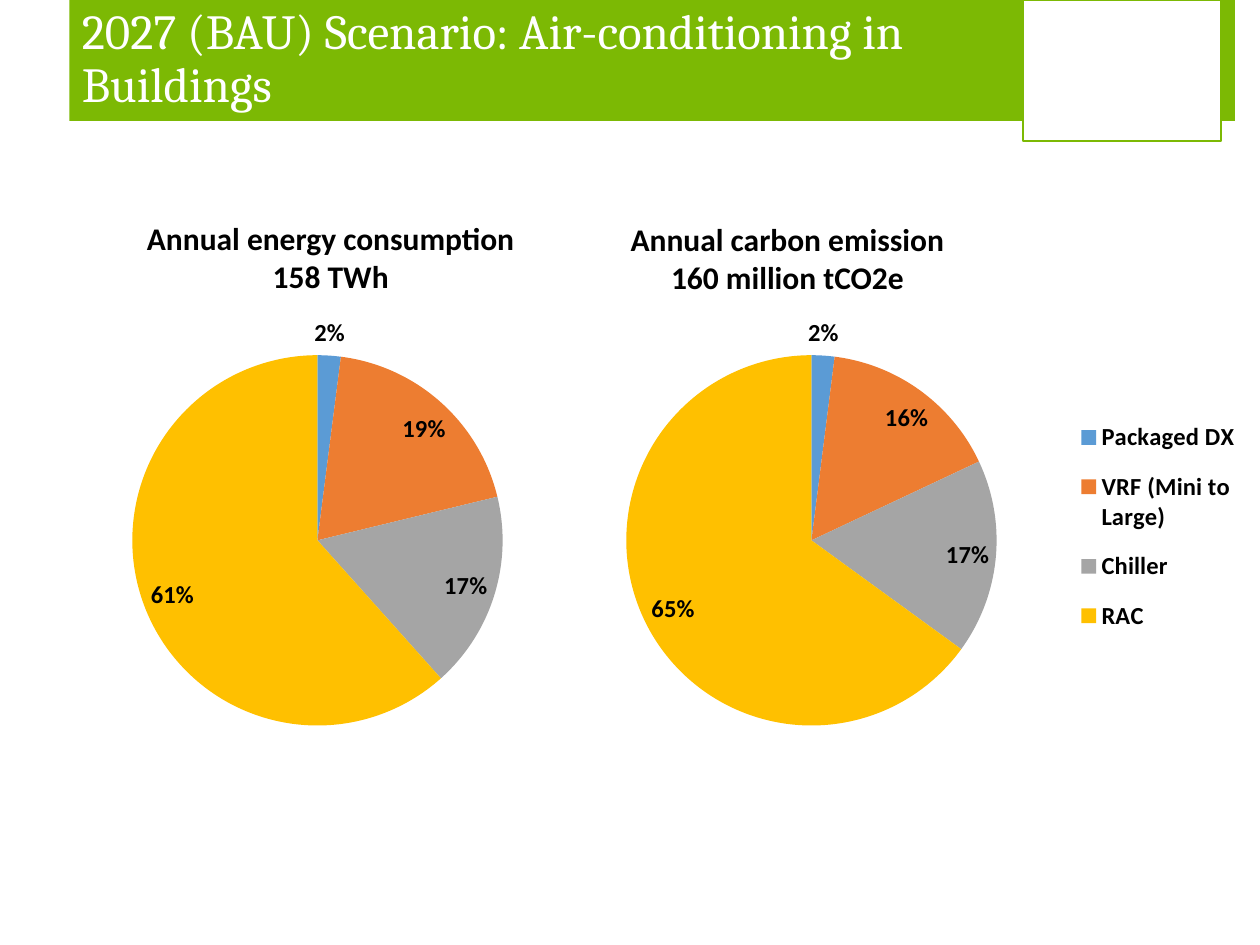
from dataclasses import dataclass
from typing import Optional

from lxml.etree import SubElement
from pptx import Presentation
from pptx.chart.data import CategoryChartData
from pptx.dml.color import RGBColor
from pptx.enum.chart import XL_CHART_TYPE, XL_LABEL_POSITION, XL_LEGEND_POSITION
from pptx.enum.shapes import MSO_SHAPE
from pptx.enum.text import MSO_ANCHOR, MSO_AUTO_SIZE, PP_ALIGN
from pptx.oxml.ns import qn
from pptx.util import Inches, Pt

GREEN = "7CB904"
WHITE = "FFFFFF"
BLACK = "000000"
SLICE_COLOURS = ["5B9BD5", "ED7D31", "A5A5A5", "FFC000"]
SYSTEMS = ["Packaged DX", "VRF (Mini to Large)", "Chiller", "RAC"]
PIE_TOP, PIE_HEIGHT = 2.39, 3.52
PIE_DIAMETER = 2.94
PIE_CENTRE_Y = 4.29


@dataclass
class Box:
    left: float
    top: float
    width: float
    height: float

    def lengths(self) -> list:
        return [Inches(v) for v in (self.left, self.top, self.width, self.height)]

    def share(self, part: "Box") -> dict:
        return {
            "x": (part.left - self.left) / self.width,
            "y": (part.top - self.top) / self.height,
            "w": part.width / self.width,
            "h": part.height / self.height,
        }


@dataclass
class Panel:
    heading: list
    heading_box: Box
    chart_box: Box
    pie_centre_x: float
    shares: list
    legend_box: Optional[Box] = None


PANELS = [
    Panel(["Annual energy consumption", "158 TWh"], Box(1.05, 1.69, 3.15, 0.71),
          Box(-0.15, PIE_TOP, 5.33, PIE_HEIGHT), 2.52, [2, 19, 17, 61]),
    Panel(["Annual carbon emission", "160 million tCO2e"], Box(4.89, 1.7, 2.72, 0.71),
          Box(4.31, PIE_TOP, 5.69, PIE_HEIGHT), 6.44, [2, 16, 17, 65],
          Box(8.49, 3.2, 1.4, 1.96)),
]


def colour(code: str) -> RGBColor:
    return RGBColor.from_string(code)


def set_font(font, code: str, **formats) -> None:
    for attribute, value in formats.items():
        setattr(font, attribute, value)
    font.color.rgb = colour(code)


def draw_rectangle(slide, box: Box, fill: str, outline: Optional[str] = None) -> None:
    rectangle = slide.shapes.add_shape(MSO_SHAPE.RECTANGLE, *box.lengths())
    rectangle.shadow.inherit = False
    rectangle.fill.solid()
    rectangle.fill.fore_color.rgb = colour(fill)
    if outline:
        rectangle.line.color.rgb = colour(outline)
        rectangle.line.width = Pt(1.5)
    else:
        rectangle.line.fill.background()


def place_title(slide, wording: str, box: Box) -> None:
    title = slide.shapes.title
    slide.shapes._spTree.append(title._element)
    title.left, title.top, title.width, title.height = box.lengths()
    frame = title.text_frame
    frame.text = wording
    frame_formats = {
        "word_wrap": True,
        "auto_size": MSO_AUTO_SIZE.NONE,
        "vertical_anchor": MSO_ANCHOR.MIDDLE,
    }
    for attribute, value in frame_formats.items():
        setattr(frame, attribute, value)
    paragraph = frame.paragraphs[0]
    paragraph.alignment = PP_ALIGN.LEFT
    paragraph.line_spacing = 0.9
    set_font(paragraph.runs[0].font, WHITE, name="Cambria", size=Pt(28))


def draw_heading(slide, panel: Panel) -> None:
    frame = slide.shapes.add_textbox(*panel.heading_box.lengths()).text_frame
    frame.word_wrap = False
    frame.text = "\n".join(panel.heading)
    for paragraph in frame.paragraphs:
        paragraph.alignment = PP_ALIGN.CENTER
        set_font(paragraph.runs[0].font, BLACK, name="Calibri", size=Pt(18), bold=True)


def set_layout(element, shares: dict, inner: bool = False) -> None:
    layout = element.find(qn("c:layout"))
    if layout is None:
        layout = SubElement(element, qn("c:layout"))
        before = element.find(qn("c:legendPos"))
        if before is not None:
            before.addnext(layout)
        else:
            element.insert(0, layout)
    manual = SubElement(layout, qn("c:manualLayout"))
    settings = {"layoutTarget": "inner"} if inner else {}
    settings.update({"xMode": "edge", "yMode": "edge"})
    settings.update({key: f"{value:.3f}" for key, value in shares.items()})
    for name, value in settings.items():
        SubElement(manual, qn(f"c:{name}")).set("val", value)


def draw_pie(slide, panel: Panel) -> None:
    shares = CategoryChartData()
    shares.categories = SYSTEMS
    shares.add_series("Series 1", panel.shares)
    chart = slide.shapes.add_chart(
        XL_CHART_TYPE.PIE, *panel.chart_box.lengths(), shares).chart
    chart.has_title = False
    set_font(chart.font, BLACK, name="Calibri", size=Pt(10))

    plot = chart.plots[0]
    plot.vary_by_categories = True
    for index, code in enumerate(SLICE_COLOURS):
        fill = plot.series[0].points[index].format.fill
        fill.solid()
        fill.fore_color.rgb = colour(code)

    plot.has_data_labels = True
    label_formats = {
        "show_value": True,
        "show_percentage": False,
        "number_format": '0"%"',
        "number_format_is_linked": False,
        "position": XL_LABEL_POSITION.BEST_FIT,
    }
    for attribute, value in label_formats.items():
        setattr(plot.data_labels, attribute, value)
    set_font(plot.data_labels.font, BLACK, name="Calibri", size=Pt(14), bold=True)

    radius = PIE_DIAMETER / 2
    pie_box = Box(panel.pie_centre_x - radius, PIE_CENTRE_Y - radius,
                  PIE_DIAMETER, PIE_DIAMETER)
    plot_area = chart._chartSpace.chart.plotArea
    set_layout(plot_area, panel.chart_box.share(pie_box), inner=True)

    chart.has_legend = panel.legend_box is not None
    if panel.legend_box:
        chart.legend.position = XL_LEGEND_POSITION.RIGHT
        chart.legend.include_in_layout = False
        set_font(chart.legend.font, BLACK, name="Calibri", size=Pt(14), bold=True)
        set_layout(chart.legend._element, panel.chart_box.share(panel.legend_box))


def main() -> None:
    presentation = Presentation()
    presentation.slide_width, presentation.slide_height = Inches(10), Inches(7.5)
    slide = presentation.slides.add_slide(presentation.slide_layouts[5])
    draw_rectangle(slide, Box(0.55, 0, 9.25, 0.96), GREEN)
    draw_rectangle(slide, Box(8.12, 0, 1.57, 1.12), WHITE, GREEN)
    place_title(slide, "2027 (BAU) Scenario: Air-conditioning in Buildings",
                Box(0.55, 0, 7.57, 0.96))
    for panel in PANELS:
        draw_pie(slide, panel)
    for panel in reversed(PANELS):
        draw_heading(slide, panel)
    presentation.save("out.pptx")


if __name__ == "__main__":
    main()
